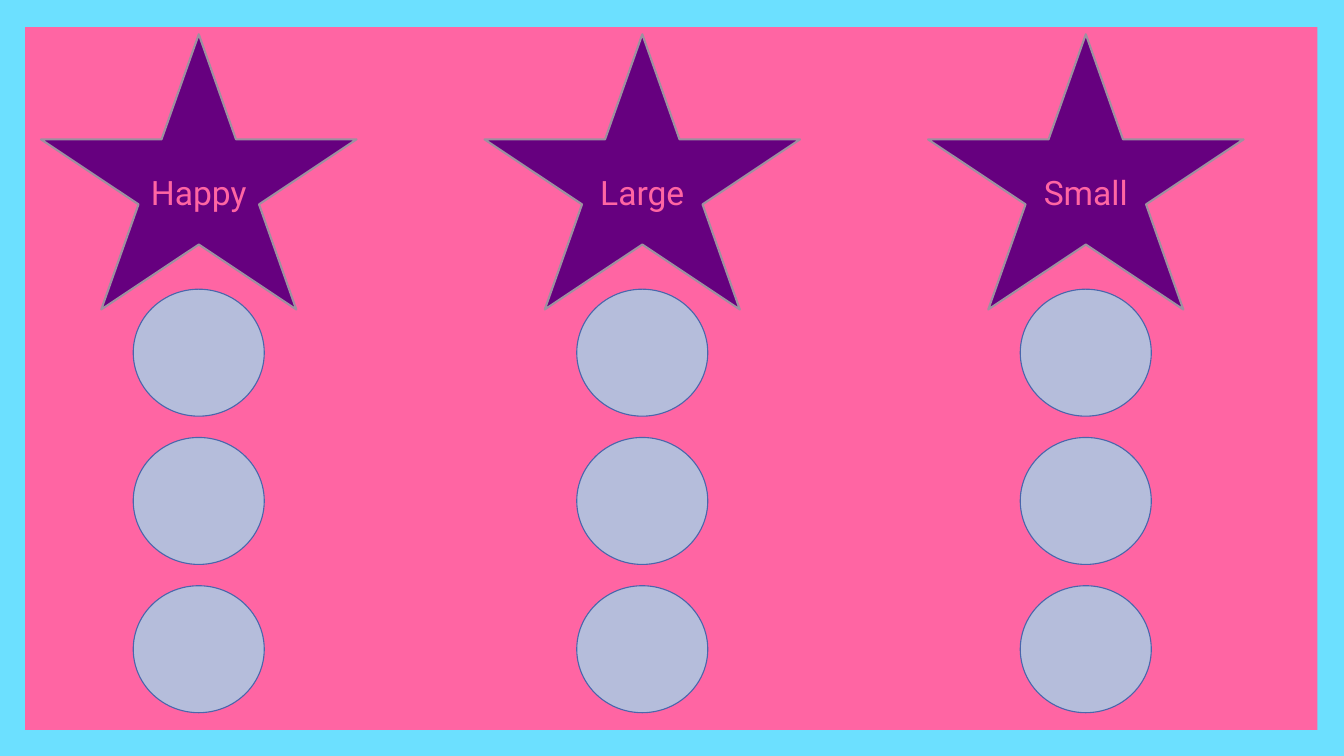
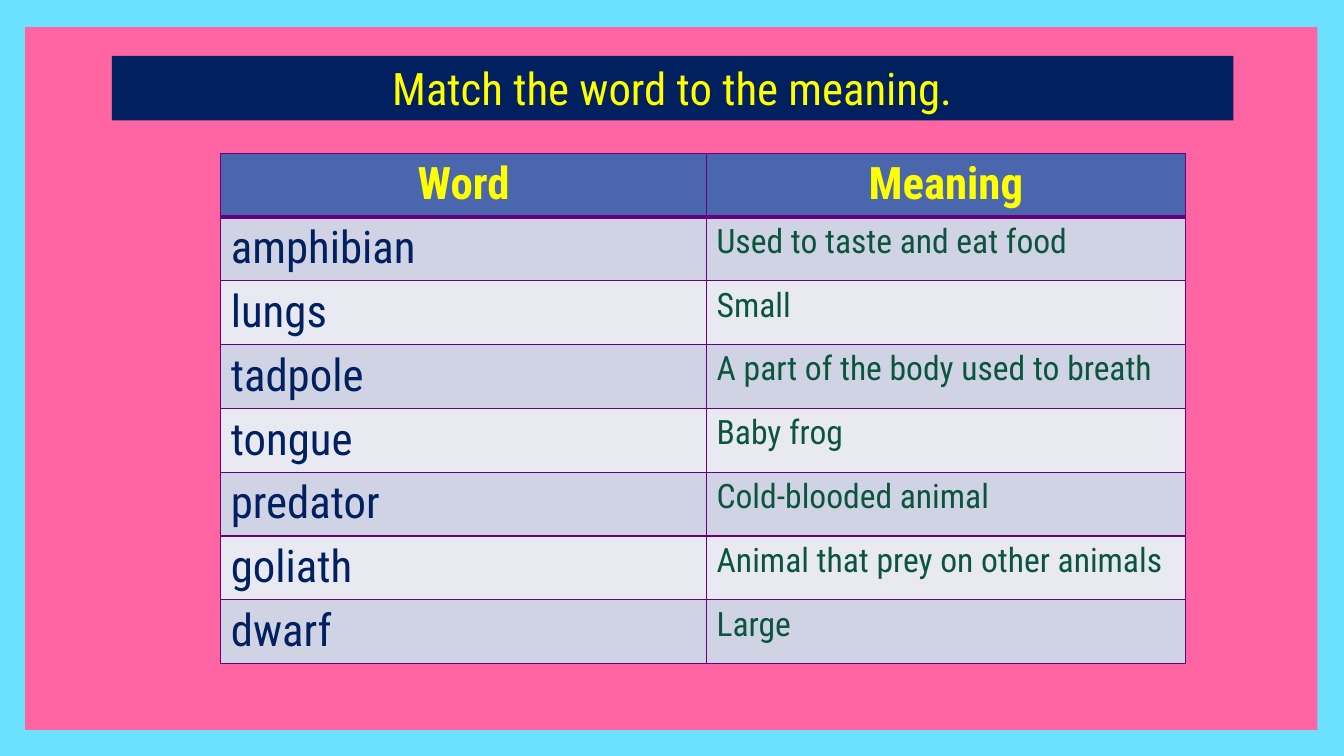
from lxml import etree
from pptx import Presentation
from pptx.dml.color import RGBColor
from pptx.enum.shapes import MSO_SHAPE
from pptx.enum.text import MSO_ANCHOR, PP_ALIGN
from pptx.oxml.ns import qn
from pptx.util import Pt

RECTANGLE = MSO_SHAPE.RECTANGLE
STAR = MSO_SHAPE.STAR_5_POINT
CIRCLE = MSO_SHAPE.FLOWCHART_CONNECTOR
CENTER, LEFT = PP_ALIGN.CENTER, PP_ALIGN.LEFT
TOP = MSO_ANCHOR.TOP

COLORS = {
    "background": "6CE0FF",
    "pink": "FF65A3",
    "purple": "66007F",
    "star line": "9D90A0",
    "circle": "B5BDDB",
    "blue": "4A66AC",
    "navy": "002060",
    "yellow": "FFFF00",
    "green": "0B553E",
    "dark row": "D0D3E3",
    "light row": "E9EAF1",
}
COLORS_RGB = {name: RGBColor.from_string(value) for name, value in COLORS.items()}
FONT, CONDENSED = "Roboto", "Roboto Condensed"


def add_box(slide, kind, left, top, width, height, fill, line=None, line_width=0):
    shape = slide.shapes.add_shape(kind, Pt(left), Pt(top), Pt(width), Pt(height))
    shape.shadow.inherit = False
    shape.fill.solid()
    shape.fill.fore_color.rgb = COLORS_RGB[fill]
    if line:
        shape.line.color.rgb = COLORS_RGB[line]
        shape.line.width = Pt(line_width)
    else:
        shape.line.fill.background()
    return shape


def write(text_frame, text, font, size, color, align=CENTER, bold=False):
    text_frame.text = text
    paragraph = text_frame.paragraphs[0]
    paragraph.alignment = align
    run_font = paragraph.runs[0].font
    run_font.name, run_font.size, run_font.bold = font, Pt(size), bold
    run_font.color.rgb = COLORS_RGB[color]


presentation = Presentation()
presentation.slide_width, presentation.slide_height = Pt(960), Pt(540)
blank = presentation.slide_layouts[6]
star_slide = presentation.slides.add_slide(blank)
table_slide = presentation.slides.add_slide(blank)

# Shared master: background and pink panel, moved behind the placeholders
master = presentation.slide_master
master.background.fill.solid()
master.background.fill.fore_color.rgb = COLORS_RGB["background"]
panel = add_box(star_slide, RECTANGLE, 18, 19.4, 923, 502, "pink")
master.shapes.element.insert(2, panel.element)

# Slide 1: a star above three circles in each column
STAR_WIDTH, STAR_HEIGHT = 225.4, 196.6
CIRCLE_WIDTH, CIRCLE_HEIGHT = 93.6, 90.7
for column, word in enumerate(["Happy", "Large", "Small"]):
    center = 142 + column * 316.8
    star = add_box(star_slide, STAR, center - STAR_WIDTH / 2, 24.5,
                   STAR_WIDTH, STAR_HEIGHT, "purple", "star line", 1.5)
    write(star.text_frame, word, FONT, 24, "pink")
    for row in range(3):
        add_box(star_slide, CIRCLE, center - CIRCLE_WIDTH / 2, 206.6 + row * 105.9,
                CIRCLE_WIDTH, CIRCLE_HEIGHT, "circle", "blue", 0.79)

# Slide 2: table of words and meanings
ROWS = [
    ("Word", "Meaning"),
    ("amphibian", "Used to taste and eat food"),
    ("lungs", "Small"),
    ("tadpole", "A part of the body used to breath"),
    ("tongue", "Baby frog"),
    ("predator", "Cold-blooded animal"),
    ("goliath", "Animal that prey on other animals"),
    ("dwarf", "Large"),
]
COLUMN_WIDTHS = [347, 342]
ROW_HEIGHT = 45.6
table = table_slide.shapes.add_table(
    len(ROWS), len(COLUMN_WIDTHS), Pt(157.7), Pt(109.4),
    Pt(sum(COLUMN_WIDTHS)), Pt(ROW_HEIGHT * len(ROWS))).table
for column, width in zip(table.columns, COLUMN_WIDTHS):
    column.width = Pt(width)

for row_index, texts in enumerate(ROWS):
    table.rows[row_index].height = Pt(ROW_HEIGHT)
    for column_index, text in enumerate(texts):
        cell = table.cell(row_index, column_index)
        if row_index == 0:
            fill = "blue"
            write(cell.text_frame, text, CONDENSED, 32, "yellow", bold=True)
        else:
            fill = "dark row" if row_index % 2 else "light row"
            size, color = [(32, "navy"), (24, "green")][column_index]
            write(cell.text_frame, text, CONDENSED, size, color, LEFT)

        # Borders, with a thick rule under the header
        properties = cell._tc.get_or_add_tcPr()
        for side in ("L", "R", "T", "B"):
            thick = (row_index, side) in [(0, "B"), (1, "T")]
            border = etree.SubElement(properties, qn(f"a:ln{side}"),
                                      w=str(Pt(3 if thick else 1)))
            border_fill = etree.SubElement(border, qn("a:solidFill"))
            etree.SubElement(border_fill, qn("a:srgbClr"), val=COLORS["purple"])
        cell.fill.solid()
        cell.fill.fore_color.rgb = COLORS_RGB[fill]

# Slide 2: title band
title = add_box(table_slide, RECTANGLE, 80, 40, 801, 46, "navy")
title.text_frame.vertical_anchor = TOP
title.text_frame.word_wrap = True
write(title.text_frame, "Match the word to the meaning.", CONDENSED, 32, "yellow")

presentation.save("out.pptx")
